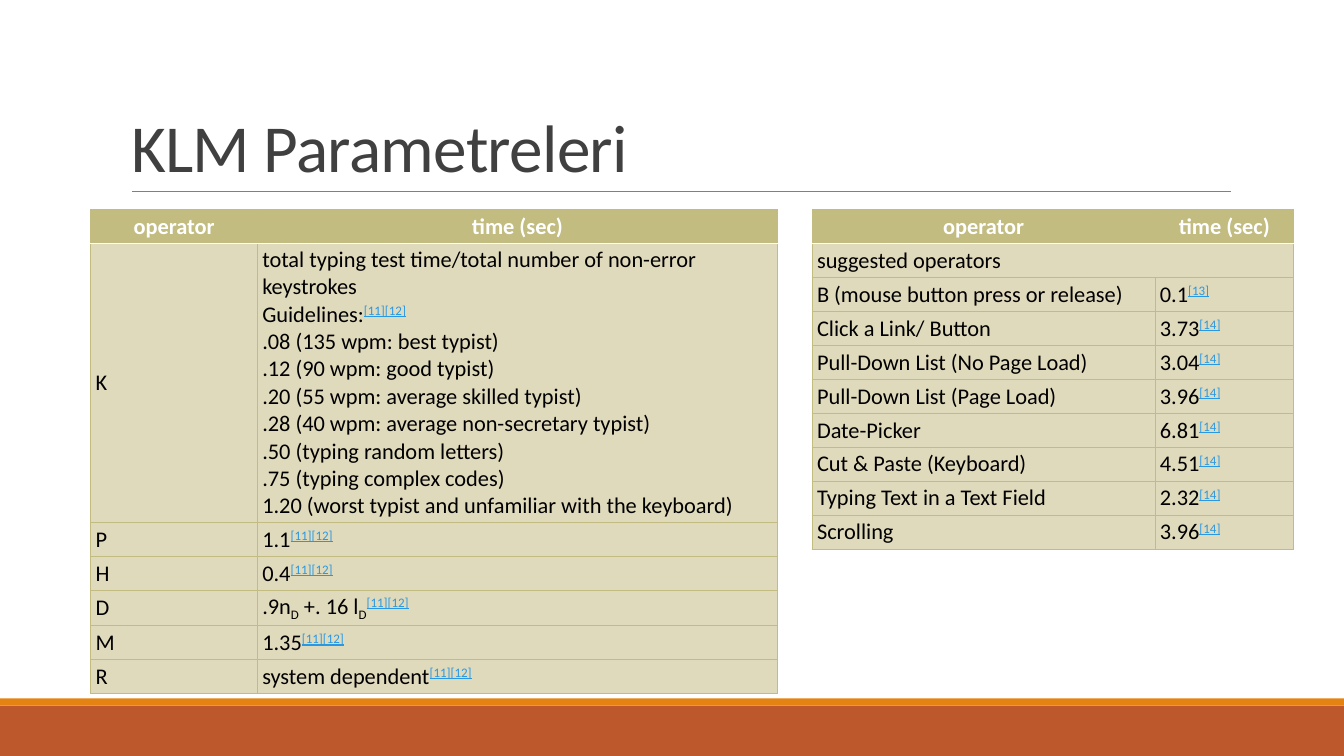
from lxml import etree
from pptx import Presentation
from pptx import util as u
from pptx.dml.color import RGBColor
from pptx.enum import shapes, text
from pptx.oxml import ns

COLORS = {
    "rust": "BD582C",
    "orange": "E48312",
    "rule": "808080",
    "title": "404040",
    "header": "C2BC80",
    "body": "E0DABC",
    "white": "FFFFFF",
    "black": "000000",
    "link": "2998E3",
}
FONT = "Calibri"
ROW_HEIGHT = 0.856
BASELINES = {"link": "30000", "sub": "-25000"}


def color(name):
    return RGBColor.from_string(COLORS[name])


def link(label):
    return (label, "link")


def sub(label):
    return (label, "sub")


GUIDE = link("[11][12]")
WEB = link("[14]")

TYPING_TIMES = [
    ["total typing test time/total number of non-error keystrokes"],
    ["Guidelines:", GUIDE],
    [".08 (135 wpm: best typist)"],
    [".12 (90 wpm: good typist)"],
    [".20 (55 wpm: average skilled typist)"],
    [".28 (40 wpm: average non-secretary typist)"],
    [".50 (typing random letters)"],
    [".75 (typing complex codes)"],
    ["1.20 (worst typist and unfamiliar with the keyboard)"],
]

HEADER = ("operator", [["time (sec)"]])
KLM_ROWS = [
    HEADER,
    ("K", TYPING_TIMES),
    ("P", [["1.1", GUIDE]]),
    ("H", [["0.4", GUIDE]]),
    ("D", [[".9n", sub("D"), " +. 16 l", sub("D"), GUIDE]]),
    ("M", [["1.35", GUIDE]]),
    ("R", [["system dependent", GUIDE]]),
]
SUGGESTED_ROWS = [
    HEADER,
    ("suggested operators", []),
    ("B (mouse button press or release)", [["0.1", link("[13]")]]),
    ("Click a Link/ Button", [["3.73", WEB]]),
    ("Pull-Down List (No Page Load)", [["3.04", WEB]]),
    ("Pull-Down List (Page Load)", [["3.96", WEB]]),
    ("Date-Picker", [["6.81", WEB]]),
    ("Cut & Paste (Keyboard)", [["4.51", WEB]]),
    ("Typing Text in a Text Field", [["2.32", WEB]]),
    ("Scrolling", [["3.96", WEB]]),
]


def add_bar(slide, top, height, fill):
    shape = slide.shapes.add_shape(
        shapes.MSO_SHAPE.RECTANGLE, 0, u.Cm(top), u.Cm(33.87), u.Cm(height))
    shape.shadow.inherit = False
    shape.fill.solid()
    shape.fill.fore_color.rgb = color(fill)
    shape.line.fill.background()


def add_rule(slide, left, right, top):
    rule = slide.shapes.add_connector(
        shapes.MSO_CONNECTOR.STRAIGHT, u.Cm(left), u.Cm(top), u.Cm(right), u.Cm(top))
    rule.line.color.rgb = color("rule")
    rule.line.width = u.Pt(0.5)
    etree.SubElement(rule._element.spPr, ns.qn("a:effectLst"))


def set_title(slide, title_text):
    title = slide.shapes.title
    title.left, title.top = u.Cm(3.05), u.Cm(0.79)
    title.width, title.height = u.Cm(27.94), u.Cm(4.04)
    frame = title.text_frame
    frame.text = title_text
    frame.auto_size = text.MSO_AUTO_SIZE.NONE
    frame.vertical_anchor = text.MSO_ANCHOR.BOTTOM
    paragraph = frame.paragraphs[0]
    paragraph.alignment = text.PP_ALIGN.LEFT
    paragraph.line_spacing = 0.85
    run = paragraph.runs[0]
    run.font.name, run.font.size = FONT, u.Pt(48)
    run.font.color.rgb = color("title")
    run._r.get_or_add_rPr().set("spc", "-50")


def add_run(paragraph, part, is_header):
    label, role = (part, "plain") if isinstance(part, str) else part
    run = paragraph.add_run()
    run.text = label
    run.font.name, run.font.size = FONT, u.Pt(16)
    run.font.bold = is_header
    run.font.underline = role == "link"
    plain_color = "white" if is_header else "black"
    run.font.color.rgb = color("link" if role == "link" else plain_color)
    if role in BASELINES:
        run._r.get_or_add_rPr().set("baseline", BASELINES[role])


def set_borders(cell, row_index):
    heading_edge = {0: "a:lnB", 1: "a:lnT"}.get(row_index)
    properties = cell._tc.get_or_add_tcPr()
    for position, side in enumerate(("a:lnL", "a:lnR", "a:lnT", "a:lnB")):
        name, width = ("white", 1.25) if side == heading_edge else ("header", 1)
        border = etree.Element(ns.qn(side), w=str(int(u.Pt(width))))
        fill = etree.SubElement(border, ns.qn("a:solidFill"))
        etree.SubElement(fill, ns.qn("a:srgbClr"), val=COLORS[name])
        properties.insert(position, border)


def fill_cell(cell, lines, row_index):
    is_header = row_index == 0
    cell.margin_left = cell.margin_right = u.Cm(0.12)
    cell.margin_top = cell.margin_bottom = u.Cm(0.06)
    cell.vertical_anchor = text.MSO_ANCHOR.MIDDLE
    cell.fill.solid()
    cell.fill.fore_color.rgb = color("header" if is_header else "body")
    set_borders(cell, row_index)
    frame = cell.text_frame
    for index, parts in enumerate(lines):
        paragraph = frame.add_paragraph() if index else frame.paragraphs[0]
        paragraph.alignment = text.PP_ALIGN.CENTER if is_header else text.PP_ALIGN.LEFT
        for part in parts:
            add_run(paragraph, part, is_header)


def add_operator_table(slide, left, widths, rows, tall_rows):
    heights = [tall_rows.get(index, ROW_HEIGHT) for index in range(len(rows))]
    table = slide.shapes.add_table(
        len(rows), 2, u.Cm(left), u.Cm(5.28), u.Cm(sum(widths)), u.Cm(sum(heights))).table
    table.horz_banding = False
    for column, width in zip(table.columns, widths):
        column.width = u.Cm(width)
    for row_index, (operator, times) in enumerate(rows):
        table.rows[row_index].height = u.Cm(heights[row_index])
        fill_cell(table.cell(row_index, 0), [[operator]], row_index)
        fill_cell(table.cell(row_index, 1), times, row_index)
        if not times:
            table.cell(row_index, 0).merge(table.cell(row_index, 1))


def main():
    presentation = Presentation()
    presentation.slide_width, presentation.slide_height = u.Cm(33.87), u.Cm(19.05)
    slide = presentation.slides.add_slide(presentation.slide_layouts[5])
    add_bar(slide, 17.78, 1.27, "rust")
    add_bar(slide, 17.6, 0.18, "orange")
    add_rule(slide, 3.33, 31.01, 4.83)
    set_title(slide, "KLM Parametreleri")
    add_operator_table(slide, 2.29, (4.2, 13.1), KLM_ROWS, {1: 7.03})
    add_operator_table(slide, 20.47, (8.64, 3.49), SUGGESTED_ROWS, {})
    presentation.save("out.pptx")


if __name__ == "__main__":
    main()
